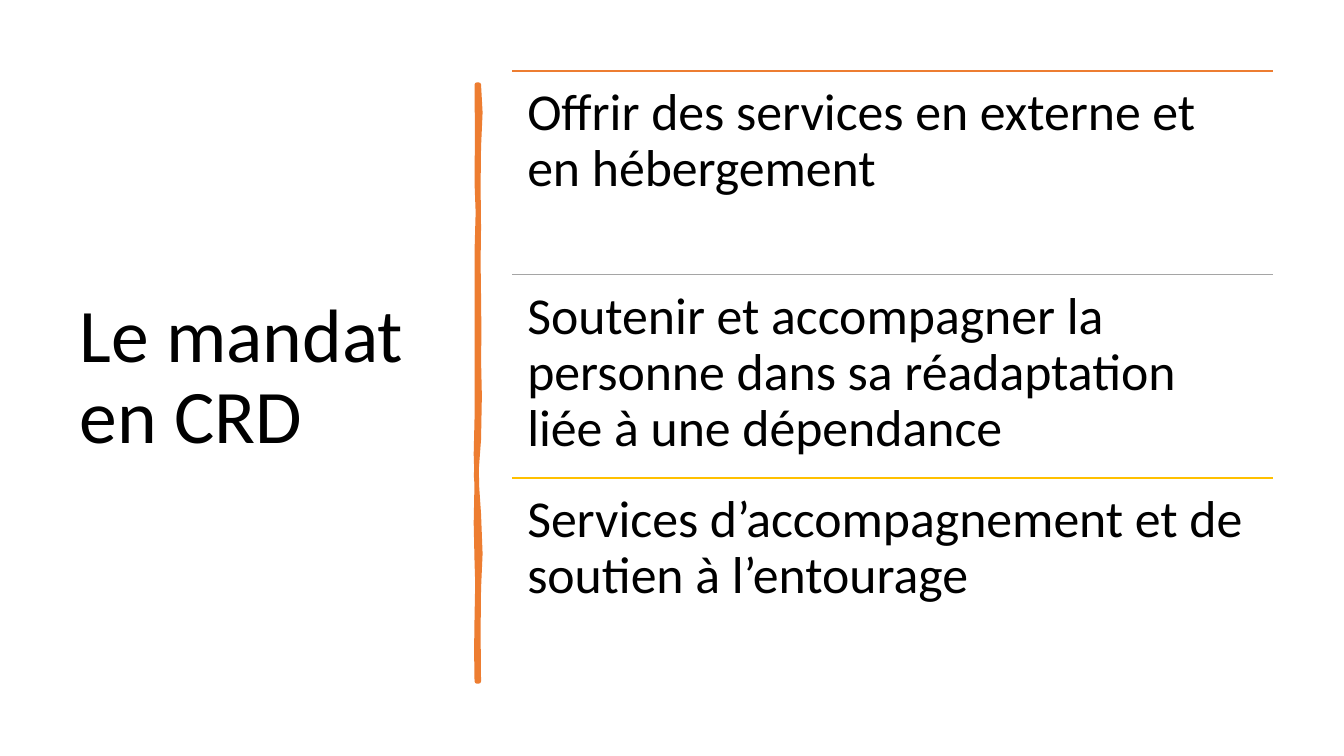
from dataclasses import dataclass

from lxml import etree
from pptx import Presentation
from pptx.dml.color import RGBColor
from pptx.enum import shapes, text
from pptx.oxml import ns
from pptx.slide import Slide
from pptx.util import Pt

Point = tuple[float, float]

HUES = {"ink": "000000", "orange": "ED7D31", "grey": "A5A5A5", "gold": "FFC000"}
FONT = "Calibri"
LEFT, TOP, WIDE, STEP = 365.8, 50.7, 543.6, 145.4


@dataclass(frozen=True)
class Item:
    words: str
    hue: str


@dataclass(frozen=True)
class Box:
    left: float
    top: float
    width: float
    height: float


ITEMS = [
    Item("Offrir des services en externe et en hébergement", "orange"),
    Item("Soutenir et accompagner la personne dans sa réadaptation liée à une dépendance", "grey"),
    Item("Services d’accompagnement et de soutien à l’entourage", "gold"),
]

# Outline of the hand-drawn bar: down the right side, up the left.
BRUSH: list[Point] = [
    (342, 60.5), (343.1, 80.4), (342, 105.1), (341.7, 132.9), (342, 162.7),
    (341.7, 187), (342, 211.7), (342.3, 238.6), (342, 256.3), (342.6, 283),
    (342, 313.9), (340.1, 339.2), (342, 367.2), (343.1, 395.5), (342, 420.5),
    (341.7, 451.7), (342, 486.7),
    (340.6, 486.7), (340.3, 464.3), (340.6, 441.4), (341.1, 416.7), (340.6, 401),
    (340, 373.6), (340.6, 343.4), (340, 324.4), (340.6, 298.8), (340.6, 241.2),
    (340.6, 180), (341.4, 151.7), (340.6, 130.3), (340.9, 96), (340.6, 60.5),
]


def color(name: str) -> RGBColor:
    return RGBColor.from_string(HUES[name])


def add_brush(slide: Slide) -> None:
    first, *rest = [(Pt(x), Pt(y)) for x, y in BRUSH]
    pen = slide.shapes.build_freeform(*first)
    pen.add_line_segments(rest, close=True)
    bar = pen.convert_to_shape()
    bar.shadow.inherit = False
    bar.fill.solid()
    bar.fill.fore_color.rgb = color("orange")
    bar.line.color.rgb = color("orange")
    bar.line.width = Pt(3.25)


def add_text(slide: Slide, box: Box, words: str, size: float,
             inset: Point, anchor: text.MSO_ANCHOR) -> None:
    shape = slide.shapes.add_textbox(
        Pt(box.left), Pt(box.top), Pt(box.width), Pt(box.height))
    frame = shape.text_frame
    frame.word_wrap = True
    frame.vertical_anchor = anchor
    frame.margin_left = frame.margin_right = Pt(inset[0])
    frame.margin_top = frame.margin_bottom = Pt(inset[1])
    para = frame.paragraphs[0]
    para.text = words
    para.line_spacing = 0.9
    para.font.name = FONT
    para.font.size = Pt(size)
    para.font.color.rgb = color("ink")


def add_rule(slide: Slide, top: float, hue: str) -> None:
    rule = slide.shapes.add_connector(
        shapes.MSO_CONNECTOR.STRAIGHT, Pt(LEFT), Pt(top), Pt(LEFT + WIDE), Pt(top))
    rule.line.color.rgb = color(hue)
    rule.line.width = Pt(1)
    etree.SubElement(rule._element.spPr, ns.qn("a:effectLst"))


def main() -> None:
    deck = Presentation()
    deck.slide_width, deck.slide_height = Pt(960), Pt(540)
    slide = deck.slides.add_slide(deck.slide_layouts[6])
    add_text(slide, Box(50, 50.4, 269.3, 440), "Le mandat en CRD", 54,
             (7.2, 3.6), text.MSO_ANCHOR.MIDDLE)
    add_brush(slide)
    for i, item in enumerate(ITEMS):
        top = TOP + i * STEP
        add_rule(slide, top, item.hue)
        add_text(slide, Box(LEFT, top, WIDE, STEP), item.words, 37,
                 (10.8, 10.8), text.MSO_ANCHOR.TOP)
    deck.save("out.pptx")


if __name__ == "__main__":
    main()
